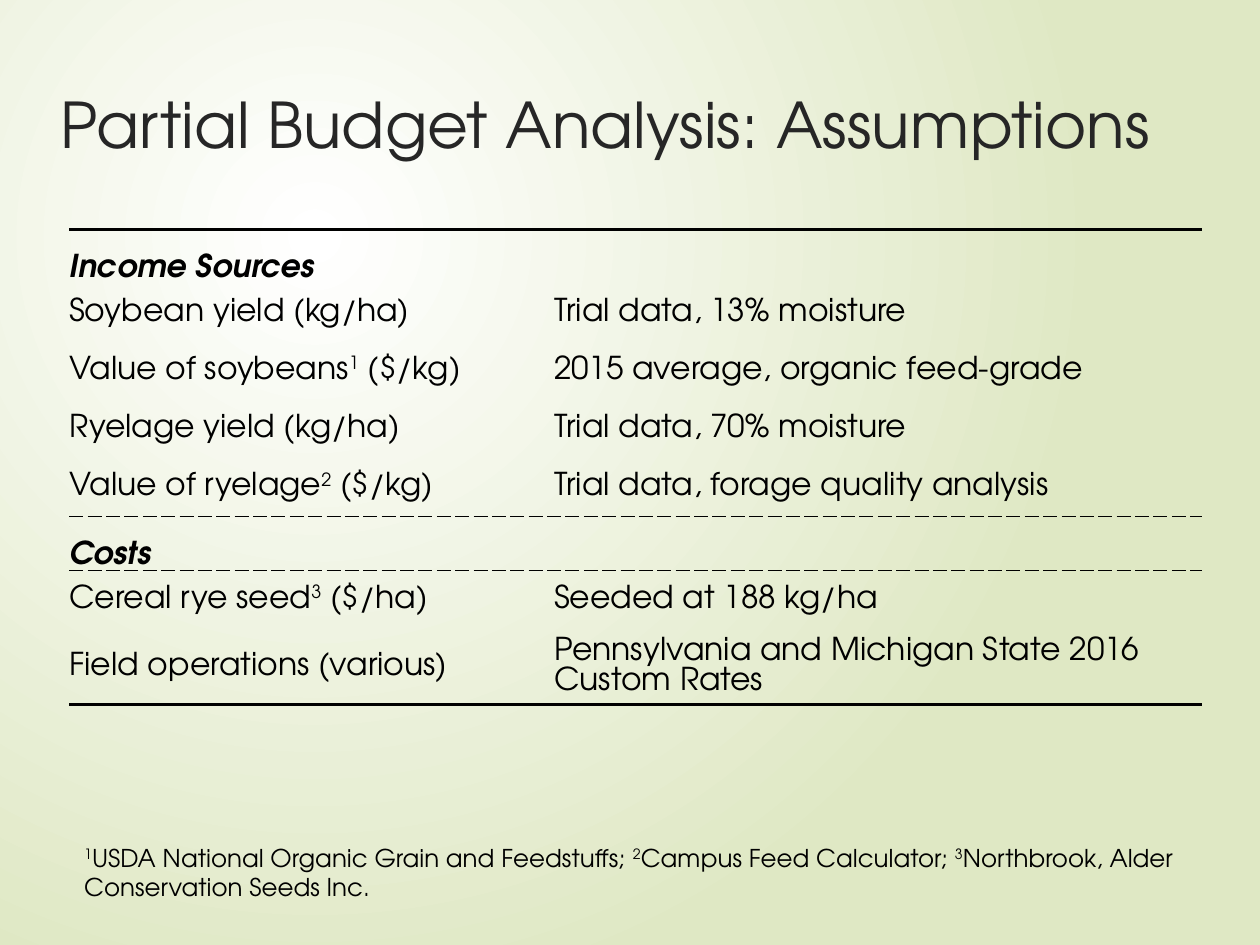
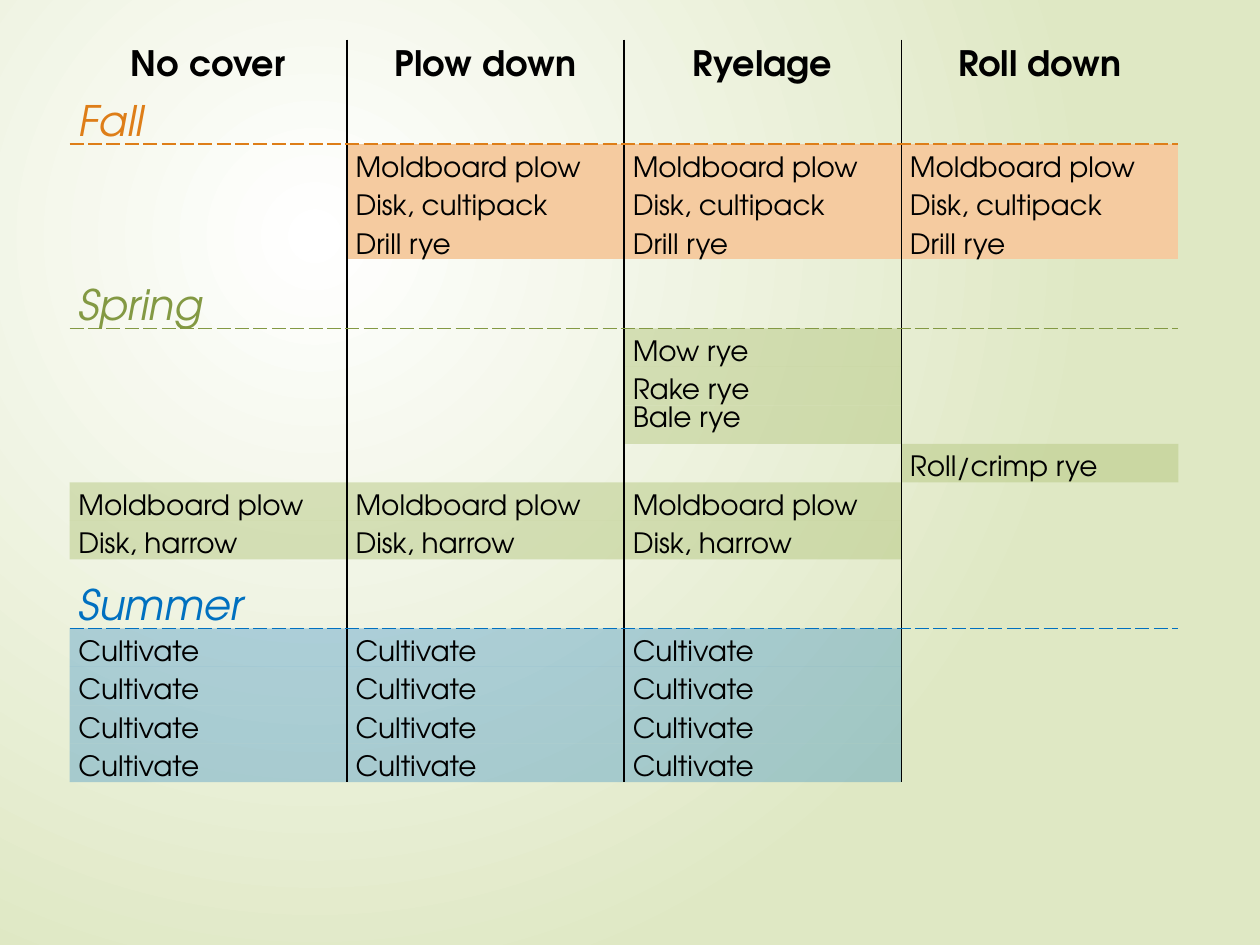
from itertools import product
from pptx import Presentation
from pptx import util as u
from pptx.dml.color import RGBColor
from pptx.enum import text
from pptx.oxml import parse_xml
from pptx.oxml.ns import nsdecls

Pt = u.Pt
FONT = "TeX Gyre Adventor"
INK = {
    "black": "000000", "title": "262626", "white": "FFFFFF", "pale": "DFE8C4",
    "fall": "DE7E18", "spring": "839943", "summer": "0070C0",
    "peach": "F5CBA0", "leaf": "B6C882",
}
# Fill and opacity (percent) of the tasks of each season
TINT = {"fall": ("peach", 100), "spring": ("leaf", 50), "summer": ("summer", 28)}
TOP, MID, LOW = (text.MSO_ANCHOR.TOP, text.MSO_ANCHOR.MIDDLE,
                 text.MSO_ANCHOR.BOTTOM)
PLAIN = "{2D5ABB26-0587-4C30-8999-92F81FD0307C}"  # table style without grid


# Shared parts
def backdrop(prs):
    """Radial gradient behind every slide."""
    sheet = prs.slide_master._element.cSld
    if sheet.bg is not None:
        sheet.remove(sheet.bg)
    stops = "".join(f'<a:gs pos="{pos}"><a:srgbClr val="{INK[ink]}"/></a:gs>'
                    for pos, ink in ((0, "white"), (100000, "pale")))
    sheet.insert(0, parse_xml(
        f'<p:bg {nsdecls("p", "a")}><p:bgPr><a:gradFill rotWithShape="1">'
        f'<a:gsLst>{stops}</a:gsLst><a:path path="circle"><a:fillToRect '
        'l="50000" t="50000" r="100000" b="100000"/></a:path></a:gradFill>'
        '<a:effectLst/></p:bgPr></p:bg>'))


def write(para, words, size, ink="black", bold=False, slant=False):
    """Fill a paragraph; parts between carets are raised."""
    font = para.font
    font.name, font.size, font.bold, font.italic = FONT, Pt(size), bold, slant
    font.color.rgb = RGBColor.from_string(INK[ink])
    for i, part in enumerate(words.split("^")):
        if part:
            run = para.add_run()
            run.text = part
            if i % 2:
                run.font._element.set("baseline", "30000")
    if not words:
        para._p.get_or_add_endParaRPr().set("sz", str(size * 100))


def label(slide, box, words, size, ink="black"):
    frame = slide.shapes.add_textbox(*map(Pt, box)).text_frame
    frame.word_wrap = True
    write(frame.paragraphs[0], words, size, ink)


def grid(slide, box, cols, rows):
    """Bare table with the given column widths and row heights."""
    frame = slide.shapes.add_table(len(rows), len(cols), *map(Pt, box))
    tab = frame.table
    tab.first_row = tab.horz_banding = False
    tab._tbl.tblPr[0].text = PLAIN
    for col, wide in zip(tab.columns, cols):
        col.width = Pt(wide)
    for row, high in zip(tab.rows, rows):
        row.height = Pt(high)
    return tab


def pad(cell, left, top, right, low):
    cell.margin_left, cell.margin_top = Pt(left), Pt(top)
    cell.margin_right, cell.margin_bottom = Pt(right), Pt(low)


def edge(cell, sides):
    """Draw borders; sides maps L, R, T, B to (ink, width, dash)."""
    props = cell._tc.get_or_add_tcPr()
    for side in "LRTB":
        if side in sides:
            ink, wide, dash = sides[side]
            props.append(parse_xml(
                f'<a:ln{side} {nsdecls("a")} w="{Pt(wide)}"><a:solidFill>'
                f'<a:srgbClr val="{INK[ink]}"/></a:solidFill>'
                f'<a:prstDash val="{dash}"/></a:ln{side}>'))
        elif side == "B" and "T" in sides:
            # Keeps the top rule from being repeated below the cell
            props.append(parse_xml(
                f'<a:lnB {nsdecls("a")} w="0"><a:noFill/></a:lnB>'))


def tint(cell, ink, alpha):
    cell.fill.solid()
    cell.fill.fore_color.rgb = RGBColor.from_string(INK[ink])
    if alpha < 100:
        tone = cell._tc.tcPr[-1][0]
        tone.append(parse_xml(
            f'<a:alpha {nsdecls("a")} val="{alpha * 1000}"/>'))


# Slide 1: sources of the budget figures
SOURCES = [
    ("Income Sources", ""),
    ("Soybean yield (kg/ha)", "Trial data, 13% moisture"),
    ("Value of soybeans^1^ ($/kg)", "2015 average, organic feed-grade"),
    ("Ryelage yield (kg/ha)", "Trial data, 70% moisture"),
    ("Value of ryelage^2^ ($/kg)", "Trial data, forage quality analysis"),
    ("Costs", ""),
    ("Cereal rye seed^3^ ($/ha)", "Seeded at 188 kg/ha"),
    ("Field operations (various)",
     "Pennsylvania and Michigan State 2016 Custom Rates"),
]
NOTES = ("^1^USDA National Organic Grain and Feedstuffs; "
         "^2^Campus Feed Calculator; "
         "^3^Northbrook, Alder Conservation Seeds Inc.")


def budget(slide, box):
    rule, dash = ("black", 2, "solid"), ("black", 1, "sysDash")
    lines = {0: {"T": rule}, 4: {"B": dash}, 5: {"T": dash, "B": dash},
             6: {"T": dash}, 7: {"B": rule}}
    rows = [33.3 if right else 31 for _, right in SOURCES]
    rows[-1] = 36.8
    tab = grid(slide, box, (277, box[2] - 277), rows)
    for r, c in product(range(len(rows)), range(2)):
        cell, head = tab.cell(r, c), not SOURCES[r][1]
        pad(cell, 0, 0, 0, 0)
        cell.vertical_anchor = LOW if head else MID
        write(cell.text_frame.paragraphs[0], SOURCES[r][c], 18,
              bold=head, slant=head)
        edge(cell, lines.get(r, {}))


# Slide 2: field work by season and system
SYSTEMS = ["No cover", "Plow down", "Ryelage", "Roll down"]
# Each task names the columns in which it is done
TASKS = {
    "Fall": [("Moldboard plow", (1, 2, 3)), ("Disk, cultipack", (1, 2, 3)),
             ("Drill rye", (1, 2, 3))],
    "Spring": [("Mow rye", (2,)), ("Rake rye", (2,)), ("Bale rye", (2,)),
               ("Roll/crimp rye", (3,)), ("Moldboard plow", (0, 1, 2)),
               ("Disk, harrow", (0, 1, 2))],
    "Summer": [("Cultivate", (0, 1, 2))] * 4,
}


def work(slide, box):
    rows = [30.2]
    for season, tasks in TASKS.items():
        rows += [28.7 if season == "Fall" else 39.4] + [22] * len(tasks)
    tab = grid(slide, box, [box[2] / 4] * 4, rows)

    def put(r, c, words, size, left=5, anchor=LOW, lines=None, **look):
        cell = tab.cell(r, c)
        pad(cell, left, 0.7, 0.7, 0)
        cell.vertical_anchor = anchor
        write(cell.text_frame.paragraphs[0], words, size, **look)
        rule = ("black", 1, "solid")
        sides = dict(lines or {})
        if c > 0:
            sides["L"] = rule
        if c < 3:
            sides["R"] = rule
        edge(cell, sides)
        return cell

    # Column heads
    for c, name in enumerate(SYSTEMS):
        cell = put(0, c, name, 20, left=0.7, anchor=MID, bold=True)
        cell.text_frame.paragraphs[0].alignment = text.PP_ALIGN.CENTER

    # Seasons and their tasks
    r = 1
    for season, tasks in TASKS.items():
        key = season.lower()
        dash = (key, 1, "sysDash")
        for c in range(4):
            name, size = (season, 24) if c == 0 else ("", 16)
            put(r, c, name, size, ink=key, slant=True, lines={"B": dash})
        for i, (task, cols) in enumerate(tasks):
            r += 1
            for c in range(4):
                cell = put(r, c, task if c in cols else "", 16,
                           anchor=TOP if task == "Bale rye" else LOW,
                           lines={"T": dash} if i == 0 else None)
                if c in cols:
                    tint(cell, *TINT[key])
        r += 1


def main():
    prs = Presentation()
    prs.slide_width, prs.slide_height = Pt(720), Pt(540)
    backdrop(prs)
    blank = prs.slide_layouts[6]

    page = prs.slides.add_slide(blank)
    label(page, (27.4, 45.4, 656, 100),
          "Partial Budget Analysis: Assumptions", 36, "title")
    budget(page, (39.6, 131, 647.4, 265.3))
    label(page, (41, 478, 644.4, 41), NOTES, 14)

    work(prs.slides.add_slide(blank), (39.8, 22.6, 633.6, 424))
    prs.save("out.pptx")


if __name__ == "__main__":
    main()
